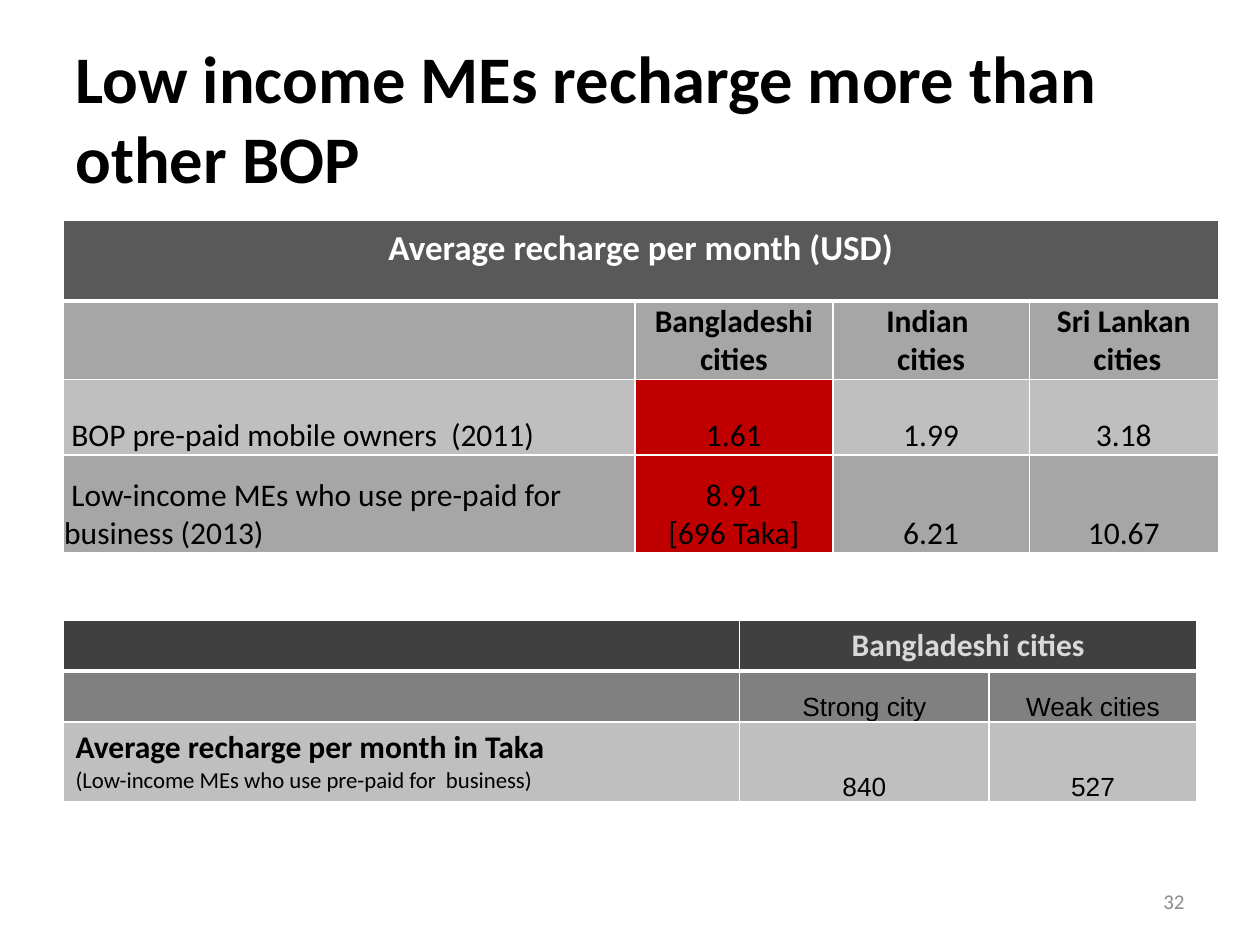
from lxml.etree import SubElement
from pptx import Presentation
from pptx.dml.color import RGBColor
from pptx.enum.text import MSO_ANCHOR as Anchor, PP_ALIGN as Align
from pptx.oxml.ns import qn
from pptx.util import Inches, Pt

TITLE = "Low income MEs recharge more than other BOP"
PAGE_NUMBER = "32"
RED = "C00000"

STYLES = {
    "title": dict(name="Calibri", size=38, bold=True, color="000000"),
    "number": dict(name="Calibri", size=12, bold=False, color="8C8C8C"),
    "banner": dict(name="Calibri", size=20, bold=True, color="FFFFFF"),
    "region": dict(name="Calibri", size=18, bold=True, color="D9D9D9"),
    "heading": dict(name="Calibri", size=18, bold=True, color="000000"),
    "value": dict(name="Calibri", size=18, bold=False, color="000000"),
    "detail": dict(name="Calibri", size=13, bold=False, color="000000"),
    "city": dict(name="Arial", size=15, bold=False, color="000000"),
}

COUNTRY_TABLE = dict(
    top=1.75, columns=[4.54, 1.57, 1.56, 1.5], inset=0.01, merge=(0, 3),
    rows=[
        (0.64, "595959", "banner", ["Average recharge per month (USD)", "", "", ""]),
        (0.61, "A6A6A6", "heading",
         ["", "Bangladeshi cities", "Indian \ncities", "Sri Lankan\n cities"]),
        (0.6, "BFBFBF", "value",
         [" BOP pre-paid mobile owners  (2011)", "1.61", "1.99", "3.18"]),
        (0.78, "A6A6A6", "value",
         [" Low-income MEs who use pre-paid for  business (2013)",
          "8.91\n[696 Taka]", "6.21", "10.67"]),
    ],
    highlights=[(2, 1), (3, 1)], labels={},
)
CITY_TABLE = dict(
    top=4.92, columns=[5.37, 1.98, 1.65], inset=0, merge=(1, 2),
    rows=[
        (0.39, "404040", "region", ["", "Bangladeshi cities", ""]),
        (0.4, "808080", "city", ["", "Strong city", "Weak cities"]),
        (0.63, "BFBFBF", "city",
         ["Average recharge per month in Taka\n"
          "(Low-income MEs who use pre-paid for  business)", "840", "527"]),
    ],
    highlights=[], labels={(2, 0): ["heading", "detail"]},
)


def color(value):
    return RGBColor.from_string(value)


def write(frame, text, styles, align):
    for index, line in enumerate(text.split("\n")):
        paragraph = frame.paragraphs[0] if index == 0 else frame.add_paragraph()
        paragraph.alignment = align
        run = paragraph.add_run()
        run.text = line
        style = STYLES[styles[min(index, len(styles) - 1)]]
        for key, value in style.items():
            if key == "color":
                run.font.color.rgb = color(value)
            else:
                setattr(run.font, key, Pt(value) if key == "size" else value)


def add_borders(cell, is_header):
    properties = cell._tc.get_or_add_tcPr()
    sides = {"L": 1, "R": 1, "T": 1, "B": 3} if is_header else {"L": 1, "R": 1, "B": 1}
    for side, width in sides.items():
        line = SubElement(properties, qn(f"a:ln{side}"), w=str(Pt(width)))
        fill = SubElement(line, qn("a:solidFill"))
        SubElement(fill, qn("a:srgbClr"), val="FFFFFF")


def add_table(slide, data):
    columns, rows = data["columns"], data["rows"]
    table = slide.shapes.add_table(
        len(rows), len(columns), Inches(0.5), Inches(data["top"]),
        Inches(sum(columns)), Inches(sum(row[0] for row in rows))).table
    table.first_row = table.horz_banding = False
    for column, width in zip(table.columns, columns):
        column.width = Inches(width)
    for r, (height, fill, style, texts) in enumerate(rows):
        table.rows[r].height = Inches(height)
        for c, text in enumerate(texts):
            cell = table.cell(r, c)
            add_borders(cell, r == 0)
            cell.fill.solid()
            cell.fill.fore_color.rgb = color(RED if (r, c) in data["highlights"] else fill)
            if not text:
                continue
            labels = data["labels"].get((r, c))
            if r and not labels:
                cell.vertical_anchor = Anchor.BOTTOM
                cell.margin_left = cell.margin_right = cell.margin_top = Inches(data["inset"])
                cell.margin_bottom = 0
            align = Align.LEFT if r and c == 0 else Align.CENTER
            write(cell.text_frame, text, labels or [style], align)
    first, last = data["merge"]
    table.cell(0, first).merge(table.cell(0, last))


def place(shape, left, top, width, height):
    shape.left, shape.top = Inches(left), Inches(top)
    shape.width, shape.height = Inches(width), Inches(height)


def main():
    presentation = Presentation()
    presentation.slide_width, presentation.slide_height = Inches(10), Inches(7.5)
    slide = presentation.slides.add_slide(presentation.slide_layouts[5])

    title = slide.shapes.title
    place(title, 0.5, 0.3, 9, 1.25)
    title.text_frame.vertical_anchor = Anchor.MIDDLE
    write(title.text_frame, TITLE, ["title"], Align.LEFT)

    for data in (COUNTRY_TABLE, CITY_TABLE):
        add_table(slide, data)

    number = slide.shapes.add_textbox(Inches(7.17), Inches(6.95), Inches(2.33), Inches(0.4))
    number.text_frame.word_wrap = True
    number.text_frame.vertical_anchor = Anchor.MIDDLE
    write(number.text_frame, PAGE_NUMBER, ["number"], Align.RIGHT)

    presentation.save("out.pptx")


if __name__ == "__main__":
    main()
